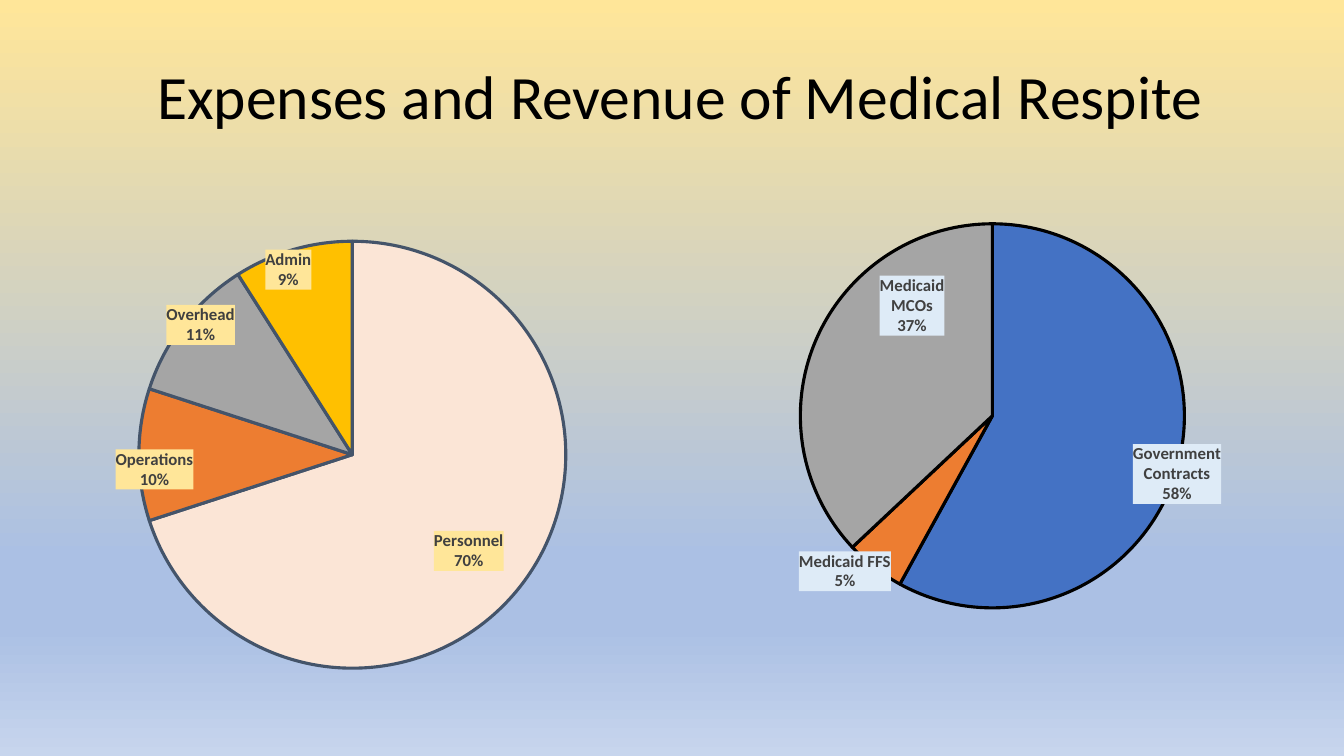
from pptx import Presentation
from pptx.chart.data import CategoryChartData
from pptx.dml.color import RGBColor
from pptx.enum.chart import XL_CHART_TYPE, XL_LABEL_POSITION
from pptx.enum.text import MSO_ANCHOR, PP_ALIGN
from pptx.oxml import parse_xml
from pptx.oxml.ns import nsdecls
from pptx.util import Cm, Pt

PIE = XL_CHART_TYPE.PIE
OUTSIDE_END = XL_LABEL_POSITION.OUTSIDE_END
MIDDLE = MSO_ANCHOR.MIDDLE
CENTER = PP_ALIGN.CENTER

FONT = "Calibri"
TITLE = "Expenses and Revenue of Medical Respite"
TITLE_BOX = (2.54, 0.66, 29.21, 3.68)
BACKGROUND_STOPS = [(0, "FFE699"), (74, "ABC0E4"), (83, "ABC0E4"), (100, "C7D5ED")]

# All lengths in cm; plot is measured from the chart's corner.
# Each slice: category, value, fill, label offset
EXPENSES = {
    "box": (0.36, 4.7, 16.28, 12.5),
    "plot": (3.14, 1.38, 10.76, 10.76),
    "number_format": "General",
    "show_value": False,
    "outline": "44546A",
    "label_fill": "FFE699",
    "slices": [
        ("Personnel", 70, "FBE5D6", (-2.42, -1.33)),
        ("Operations", 10, "ED7D31", (1.52, 0.37)),
        ("Overhead", 11, "A5A5A5", (1.41, 0.62)),
        ("Admin", 9, "FFC000", (0.51, 1.15)),
    ],
}
REVENUE = {
    "box": (17.15, 4.34, 15.37, 12.85),
    "plot": (3.02, 1.28, 9.68, 9.72),
    "number_format": "0%",
    "show_value": True,
    "outline": "000000",
    "label_fill": "DEEBF7",
    "slices": [
        ("Government Contracts", 0.58, "4472C4", (-1.29, -0.53)),
        ("Medicaid FFS", 0.05, "ED7D31", (0.5, -0.53)),
        ("Medicaid MCOs", 0.37, "A5A5A5", (3.37, -0.04)),
    ],
}


def color(hex_code):
    return RGBColor.from_string(hex_code)


def format_font(font, size, hex_code, bold=False):
    font.name = FONT
    font.size = Pt(size)
    font.bold = bold
    font.color.rgb = color(hex_code)


def write_text(shape, text, size, hex_code, align=CENTER, line_spacing=0.9):
    frame = shape.text_frame
    frame.word_wrap = True
    frame.vertical_anchor = MIDDLE
    paragraph = frame.paragraphs[0]
    paragraph.alignment = align
    paragraph.line_spacing = line_spacing
    run = paragraph.add_run()
    run.text = text
    format_font(run.font, size, hex_code)


def paint_background(slide):
    fill = slide.background.fill
    fill.gradient()
    fill.gradient_angle = 270
    stops = slide.element.xpath(".//p:bg//a:gsLst")[0]
    for stop in list(stops):
        stops.remove(stop)
    for percent, hex_code in BACKGROUND_STOPS:
        stops.append(parse_xml(
            f'<a:gs {nsdecls("a")} pos="{percent * 1000}">'
            f'<a:srgbClr val="{hex_code}"/></a:gs>'))


def layout_values(lengths, box):
    """Return x, y, w, h elements, as shares of the chart's size."""
    sizes = box[2:] * 2
    return "".join(f'<c:{name} val="{length / size:.4f}"/>'
                   for name, length, size in zip("xywh", lengths, sizes))


def set_plot_layout(chart, pie):
    plot_area = chart.element.xpath(".//c:plotArea")[0]
    for layout in plot_area.xpath("./c:layout"):
        plot_area.remove(layout)
    plot_area.insert(0, parse_xml(
        f'<c:layout {nsdecls("c")}><c:manualLayout><c:layoutTarget val="inner"/>'
        '<c:xMode val="edge"/><c:yMode val="edge"/>'
        f'{layout_values(pie["plot"], pie["box"])}</c:manualLayout></c:layout>'))


def slice_label(index, offset, pie):
    """Return the XML of one filled label, moved from its usual place."""
    return parse_xml(
        f'<c:dLbl {nsdecls("c", "a")}><c:idx val="{index}"/><c:layout><c:manualLayout>'
        f'{layout_values(offset, pie["box"])}</c:manualLayout></c:layout>'
        '<c:numFmt formatCode="0%" sourceLinked="0"/><c:spPr><a:solidFill>'
        f'<a:srgbClr val="{pie["label_fill"]}"/></a:solidFill></c:spPr>'
        '<c:txPr><a:bodyPr/><a:p><a:pPr><a:defRPr sz="1200" b="1"><a:solidFill>'
        f'<a:srgbClr val="404040"/></a:solidFill><a:latin typeface="{FONT}"/></a:defRPr></a:pPr>'
        '<a:endParaRPr lang="en-US"/></a:p></c:txPr>'
        '<c:dLblPos val="outEnd"/><c:showLegendKey val="0"/><c:showVal val="0"/>'
        '<c:showCatName val="1"/><c:showSerName val="0"/><c:showPercent val="1"/>'
        '<c:showBubbleSize val="0"/><c:separator>\n</c:separator></c:dLbl>')


def add_pie(slide, pie):
    slices = pie["slices"]
    data = CategoryChartData(number_format=pie["number_format"])
    data.categories = [item[0] for item in slices]
    data.add_series("Series 1", [item[1] for item in slices])
    chart = slide.shapes.add_chart(PIE, *map(Cm, pie["box"]), data).chart
    chart.has_title = False
    chart.has_legend = False
    format_font(chart.font, 10, "000000")
    chart.plots[0].vary_by_categories = True
    set_plot_layout(chart, pie)

    series = chart.plots[0].series[0]
    labels = series.data_labels
    labels.show_category_name = True
    labels.show_percentage = True
    labels.show_value = pie["show_value"]
    labels.number_format = "0%"
    labels.number_format_is_linked = False
    labels.position = OUTSIDE_END
    format_font(labels.font, 12, "404040", bold=True)
    label_list = chart.element.xpath(".//c:ser/c:dLbls")[0]
    for index, (_, _, fill, offset) in enumerate(slices):
        point = series.points[index].format
        point.fill.solid()
        point.fill.fore_color.rgb = color(fill)
        point.line.color.rgb = color(pie["outline"])
        point.line.width = Pt(2.25)
        label_list.insert(index, slice_label(index, offset, pie))


def main():
    presentation = Presentation()
    presentation.slide_width = Cm(33.87)
    presentation.slide_height = Cm(19.05)
    slide = presentation.slides.add_slide(presentation.slide_layouts[5])
    paint_background(slide)
    title = slide.shapes.title
    title.left, title.top, title.width, title.height = map(Cm, TITLE_BOX)
    write_text(title, TITLE, 44, "000000")
    for pie in (EXPENSES, REVENUE):
        add_pie(slide, pie)
    presentation.save("out.pptx")


if __name__ == "__main__":
    main()
